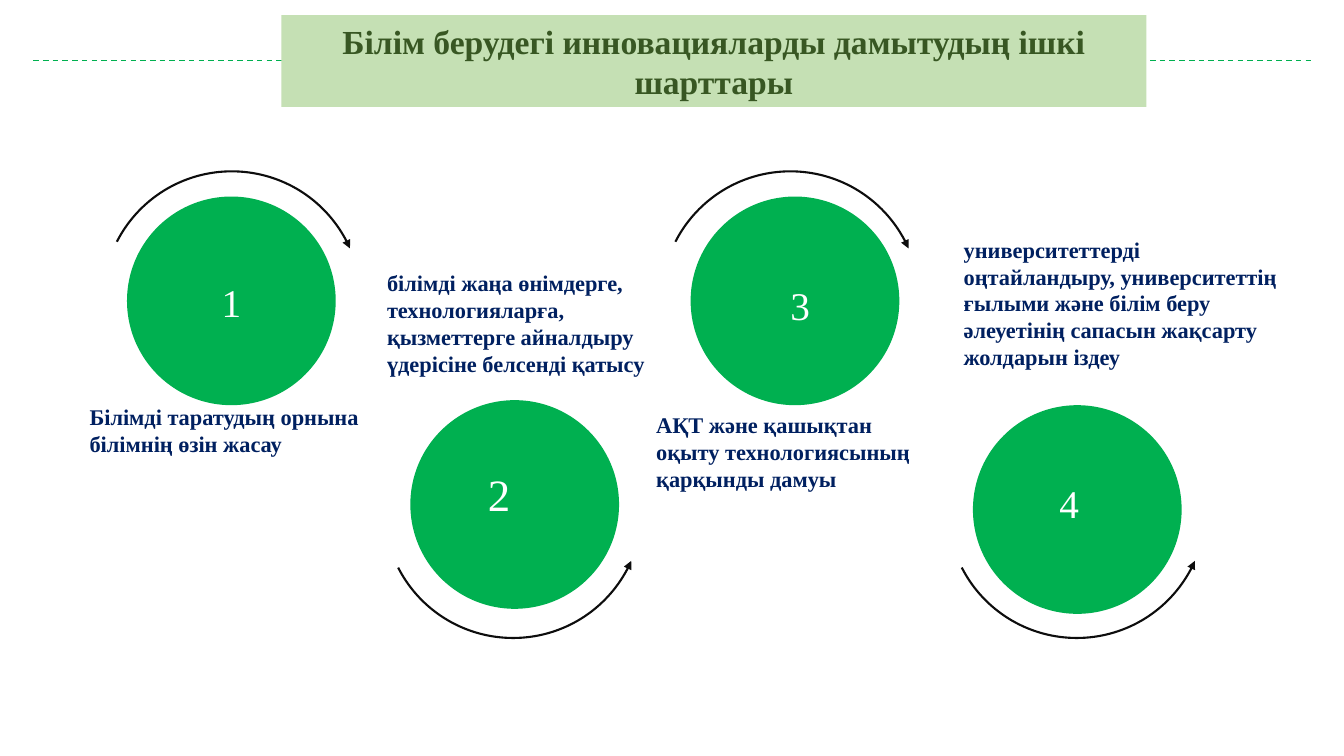
from lxml.etree import SubElement
from pptx import Presentation
from pptx.dml.color import RGBColor
from pptx.enum.dml import MSO_LINE
from pptx.enum.shapes import MSO_CONNECTOR, MSO_SHAPE
from pptx.enum.text import MSO_ANCHOR, MSO_AUTO_SIZE, PP_ALIGN
from pptx.oxml.ns import qn
from pptx.util import Inches, Pt

GREEN = RGBColor(0x00, 0xB0, 0x50)
PALE_GREEN = RGBColor(0xC5, 0xE0, 0xB4)
DARK_GREEN = RGBColor(0x38, 0x57, 0x23)
NAVY = RGBColor(0x00, 0x20, 0x60)
BLACK = RGBColor(0x0D, 0x0D, 0x0D)
WHITE = RGBColor(0xFF, 0xFF, 0xFF)
FONT = "Times New Roman"
CIRCLE_SIZE = 2.07
ARC_SIZE = 2.56
ARC_START, ARC_END = 207.02, 336.25
ANGLE_UNIT = 0.6

TITLE = "Білім берудегі инновацияларды дамытудың ішкі шарттары"
CIRCLES = [(1.26, 1.95), (4.07, 3.97), (6.85, 1.95), (9.65, 4.02)]
ARCS = [(1.02, 1.7, False), (3.81, 3.77, True), (6.56, 1.7, False), (9.4, 3.77, True)]
NUMBERS = [
    ("1", 28, (2.1, 2.71, 0.46, 0.57)),
    ("2", 32, (4.74, 4.58, 0.81, 0.64)),
    ("3", 28, (7.74, 2.74, 0.61, 0.57)),
    ("4", 28, (10.41, 4.71, 0.5, 0.57)),
]
CONDITIONS = [
    ("Білімді таратудың орнына білімнің өзін жасау", (0.79, 3.95, 2.95, 0.64)),
    ("білімді жаңа өнімдерге, технологияларға, қызметтерге айналдыру "
     "үдерісіне белсенді қатысу", (3.74, 2.62, 2.95, 1.18)),
    ("АҚТ және қашықтан оқыту технологиясының қарқынды дамуы",
     (6.41, 4.03, 2.95, 0.91)),
    ("университеттерді оңтайландыру, университеттің ғылыми және білім беру "
     "әлеуетінің сапасын жақсарту жолдарын іздеу", (9.46, 2.29, 3.31, 1.45)),
]


def add_dashed_line(page, start, end):
    line = page.shapes.add_connector(
        MSO_CONNECTOR.STRAIGHT, Inches(start), Inches(0.6), Inches(end), Inches(0.6))
    line.line.color.rgb = GREEN
    line.line.width = Pt(1)
    line.line.dash_style = MSO_LINE.DASH
    SubElement(line._element.spPr, qn("a:effectLst"))


def add_filled_shape(page, kind, place, color):
    shape = page.shapes.add_shape(kind, *map(Inches, place))
    shape.shadow.inherit = False
    shape.fill.solid()
    shape.fill.fore_color.rgb = color
    shape.line.fill.background()
    return shape


def add_arc_arrow(page, left, top, flipped):
    arc = page.shapes.add_shape(
        MSO_SHAPE.ARC, Inches(left), Inches(top), Inches(ARC_SIZE), Inches(ARC_SIZE))
    arc.shadow.inherit = False
    arc.adjustments[0] = ARC_START * ANGLE_UNIT
    arc.adjustments[1] = ARC_END * ANGLE_UNIT
    arc.fill.background()
    arc.line.color.rgb = BLACK
    arc.line.width = Pt(1.5)
    properties = arc._element.spPr
    SubElement(properties.find(qn("a:ln")), qn("a:tailEnd"), type="triangle")
    if flipped:
        properties.find(qn("a:xfrm")).set("flipV", "1")


def write_text(box, text, size, color, bold=False, align=PP_ALIGN.LEFT):
    frame = box.text_frame
    frame.word_wrap = True
    frame.auto_size = MSO_AUTO_SIZE.SHAPE_TO_FIT_TEXT
    para = frame.paragraphs[0]
    para.alignment = align
    span = para.add_run()
    span.text = text
    span.font.name = FONT
    span.font.size = Pt(size)
    span.font.bold = bold
    span.font.color.rgb = color


def add_text(page, place, text, size, color, bold=False):
    box = page.shapes.add_textbox(*map(Inches, place))
    write_text(box, text, size, color, bold)


def add_title(page):
    banner = add_filled_shape(page, MSO_SHAPE.RECTANGLE, (2.79, 0.15, 8.58, 0.91), PALE_GREEN)
    banner.text_frame.vertical_anchor = MSO_ANCHOR.MIDDLE
    write_text(banner, TITLE, 24, DARK_GREEN, True, PP_ALIGN.CENTER)


def main():
    deck = Presentation()
    deck.slide_width, deck.slide_height = Inches(13.33), Inches(7.5)
    page = deck.slides.add_slide(deck.slide_layouts[6])
    add_dashed_line(page, 8.32, 13)
    add_dashed_line(page, 0.33, 5.01)
    for left, top in CIRCLES:
        add_filled_shape(page, MSO_SHAPE.OVAL, (left, top, CIRCLE_SIZE, CIRCLE_SIZE), GREEN)
    for left, top, flipped in ARCS:
        add_arc_arrow(page, left, top, flipped)
    for number, size, place in NUMBERS:
        add_text(page, place, number, size, WHITE)
    for condition, place in CONDITIONS:
        add_text(page, place, condition, 16, NAVY, True)
    add_title(page)
    deck.save("out.pptx")


if __name__ == "__main__":
    main()
